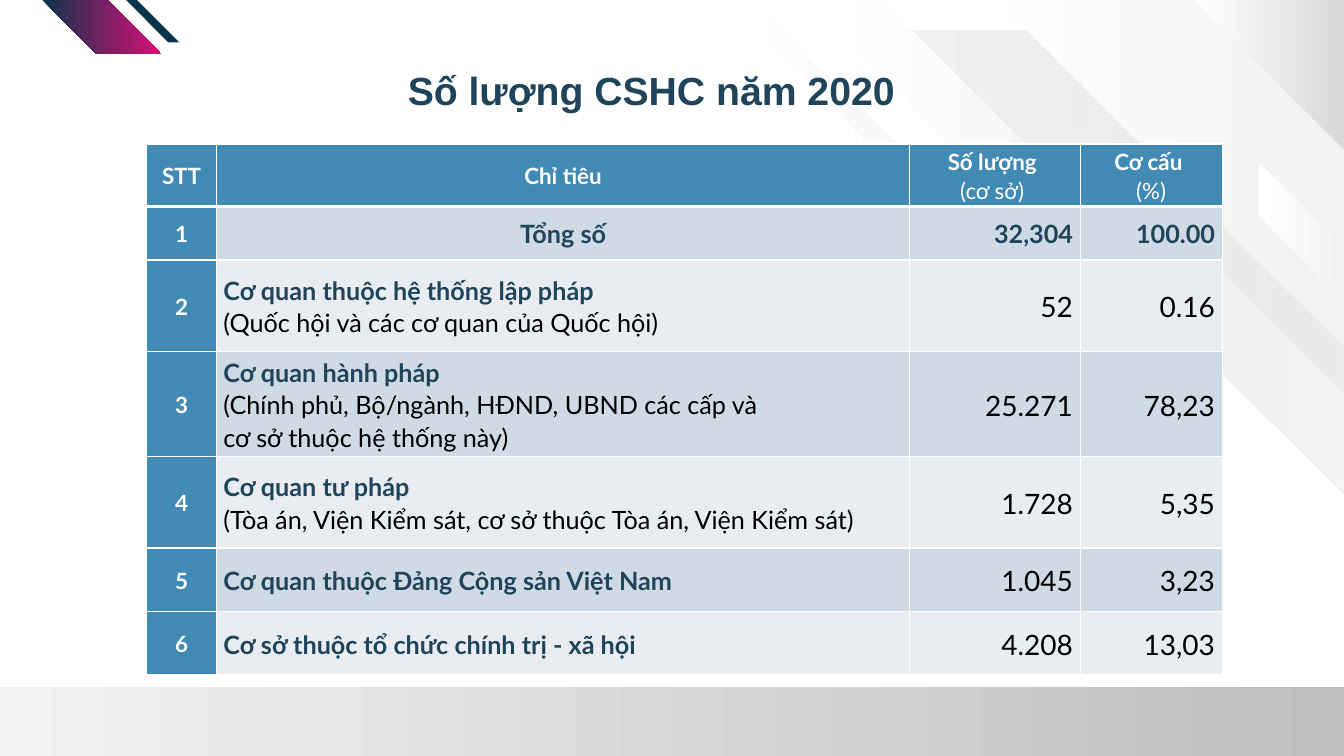
from pptx import Presentation
from pptx.dml.color import RGBColor
from pptx.enum.shapes import MSO_SHAPE as SHAPE
from pptx.enum.text import MSO_ANCHOR as ANCHOR, MSO_AUTO_SIZE as AUTO, PP_ALIGN as ALIGN
from pptx.oxml import parse_xml
from pptx.oxml.ns import nsdecls
from pptx.util import Cm, Pt

WHITE, BLACK, NAVY, BLUE = "FFFFFF", "000000", "20455A", "418AB3"
DARK, PINK, PALE, GREY = "0C344C", "D80F79", "F2F2F2", "D9D9D9"
BANDS = ["CFDAE5", "E9EDF2"]
WIDTH, HEIGHT = 33.87, 19.05

COLUMNS = [1.75, 17.48, 4.29, 3.58]
ROW_HEIGHTS = [1.57, 1.35, 2.31, 2.64, 2.31, 1.6, 1.6]
HEADER = [["STT"], ["Chỉ tiêu"], ["Số lượng ", "(cơ sở) "], ["Cơ cấu ", "(%)"]]
ROWS = [
    (["Tổng số"], "32,304", "100.00"),
    (["Cơ quan thuộc hệ thống lập pháp",
      "(Quốc hội và các cơ quan của Quốc hội)"], "52", "0.16"),
    (["Cơ quan hành pháp",
      "(Chính phủ, Bộ/ngành, HĐND, UBND các cấp và",
      "cơ sở thuộc hệ thống này)"], "25.271", "78,23"),
    (["Cơ quan tư pháp",
      "(Tòa án, Viện Kiểm sát, cơ sở thuộc Tòa án, Viện Kiểm sát)"], "1.728", "5,35"),
    (["Cơ quan thuộc Đảng Cộng sản Việt Nam"], "1.045", "3,23"),
    (["Cơ sở thuộc tổ chức chính trị - xã hội"], "4.208", "13,03"),
]

# Outline points in centimetres, then the two gradient colours
RIBBONS = [
    ([(WIDTH, 0), (23.95, 0), (WIDTH, 9.91)], WHITE, PALE),
    ([(WIDTH, 8.74), (25.88, 0.76), (22.12, 0.76), (WIDTH, 12.47)], PALE, GREY),
    ([(WIDTH, 6.22), (31.72, 4.09), (31.72, 5.44), (WIDTH, 7.57)], WHITE, PALE),
    ([(29.39, 7.16), (22.2, 0), (20.24, 0), (27.43, 7.16)], WHITE, PALE),
    ([(WIDTH, 0), (30.1, 0), (WIDTH, 3.76)], WHITE, GREY),
    ([(19, 0), (25.43, 6.43), (25.43, 7.16), (18.24, 0)], WHITE, PALE),
]
TRANSLUCENT = RIBBONS[1]
ACCENTS = [
    ([(1.07, 0), (2.41, 1.35), (4.06, 1.35), (2.72, 0)], DARK, PINK),
    ([(3.18, 0), (4.24, 1.07), (4.52, 1.07), (3.45, 0)], DARK, DARK),
]


def rgb(color):
    return RGBColor.from_string(color)


def paint(sp, start, end, angle=0):
    """Fill with one colour, or a gradient when the two differ; no line or shadow."""
    sp.shadow.inherit = False
    sp.line.fill.background()
    if start == end:
        sp.fill.solid()
        sp.fill.fore_color.rgb = rgb(start)
        return
    sp.fill.gradient()
    sp.fill.gradient_angle = angle
    for stop, color in zip(sp.fill.gradient_stops, (start, end)):
        stop.color.rgb = rgb(color)


def add_outline(shapes, points, start, end):
    first, *rest = [(Cm(x), Cm(y)) for x, y in points]
    builder = shapes.build_freeform(*first)
    builder.add_line_segments(rest, close=True)
    sp = builder.convert_to_shape()
    paint(sp, start, end)
    return sp


def add_background(s):
    bar_top = 17.32
    bar = s.shapes.add_shape(SHAPE.RECTANGLE, 0, Cm(bar_top), Cm(WIDTH), Cm(HEIGHT - bar_top))
    paint(bar, "BFBEBE", PALE, 180)
    for ribbon in RIBBONS:
        sp = add_outline(s.shapes, *ribbon)
        if ribbon is TRANSLUCENT:
            last_color = sp._element.xpath(".//a:gs/a:srgbClr")[-1]
            last_color.append(parse_xml(f'<a:alpha {nsdecls("a")} val="26000"/>'))
    group = s.shapes.add_group_shape()
    for accent in ACCENTS:
        add_outline(group.shapes, *accent)


def set_font(p, size, color, bold, name="Lato"):
    p.font.name, p.font.size, p.font.bold = name, Pt(size), bold
    p.font.color.rgb = rgb(color)


def add_title(s, left, top, width, height):
    title = s.shapes.title
    title.left, title.top, title.width, title.height = map(Cm, (left, top, width, height))
    tf = title.text_frame
    tf.margin_left = tf.margin_right = tf.margin_top = tf.margin_bottom = 0
    tf.word_wrap, tf.auto_size, tf.vertical_anchor = True, AUTO.SHAPE_TO_FIT_TEXT, ANCHOR.TOP
    tf.text = "Số lượng CSHC năm 2020"
    p = tf.paragraphs[0]
    p.alignment = ALIGN.CENTER
    set_font(p, 28, NAVY, True, "Arial")
    s.shapes._spTree.append(title._element)  # in front of the ribbons


def set_borders(cell, top, bottom):
    tc_pr = cell._tc.get_or_add_tcPr()
    for i, (side, width) in enumerate([("L", 1), ("R", 1), ("T", top), ("B", bottom)]):
        tc_pr.insert(i, parse_xml(
            f'<a:ln{side} {nsdecls("a")} w="{Pt(width)}"><a:solidFill>'
            f'<a:srgbClr val="{WHITE}"/></a:solidFill></a:ln{side}>'))


def fill_cell(cell, lines, fill, align, first_style, other_style=None):
    """Write the lines; a style is (size, colour, bold), one for the first line, one for the rest."""
    cell.fill.solid()
    cell.fill.fore_color.rgb = rgb(fill)
    cell.vertical_anchor = ANCHOR.MIDDLE
    cell.margin_left = cell.margin_right = Cm(0.18)
    cell.margin_top = cell.margin_bottom = 0
    tf = cell.text_frame
    tf.text = "\n".join(lines)
    for i, p in enumerate(tf.paragraphs):
        p.alignment, p.line_spacing = align, 1.07
        set_font(p, *(other_style if i else first_style))


def add_count_table(s, left, top):
    frame = s.shapes.add_table(len(ROW_HEIGHTS), len(COLUMNS), Cm(left), Cm(top),
                               Cm(sum(COLUMNS)), Cm(sum(ROW_HEIGHTS)))
    table = frame.table
    table.first_col = True
    for column, width in zip(table.columns, COLUMNS):
        column.width = Cm(width)
    for row, height in zip(table.rows, ROW_HEIGHTS):
        row.height = Cm(height)

    heading, total = (16, WHITE, True), (18, NAVY, True)
    for j, lines in enumerate(HEADER):
        fill_cell(table.cell(0, j), lines, BLUE, ALIGN.CENTER, heading, (16, WHITE, False))
    for i, (label, *values) in enumerate(ROWS, 1):
        is_total = i == 1
        band = BANDS[(i - 1) % 2]
        fill_cell(table.cell(i, 0), [str(i)], BLUE, ALIGN.CENTER, heading)
        fill_cell(table.cell(i, 1), label, band, ALIGN.CENTER if is_total else ALIGN.LEFT,
                  total, (18, BLACK, False))
        for j, value in enumerate(values, 2):
            fill_cell(table.cell(i, j), [value], band, ALIGN.RIGHT,
                      total if is_total else (20, BLACK, False))
    for i, row in enumerate(table.rows):
        for cell in row.cells:
            set_borders(cell, 3 if i == 1 else 1, 3 if i == 0 else 1)


def main():
    prs = Presentation()
    prs.slide_width, prs.slide_height = Cm(WIDTH), Cm(HEIGHT)
    s = prs.slides.add_slide(prs.slide_layouts[5])
    add_background(s)
    add_count_table(s, 3.7, 3.63)
    add_title(s, 2.29, 1.68, 28.24, 1.19)
    prs.save("out.pptx")


if __name__ == "__main__":
    main()
